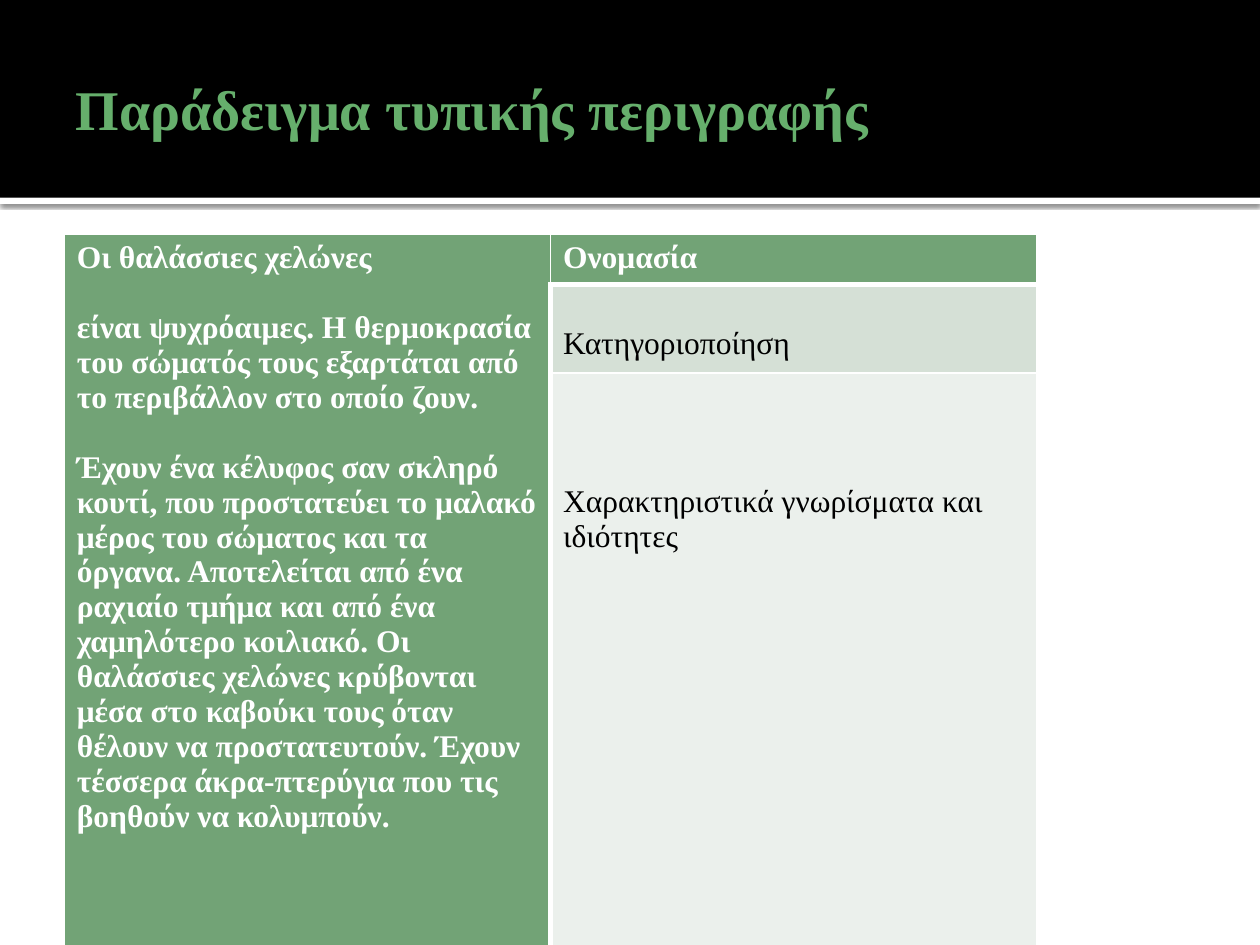
from lxml import etree
from pptx import Presentation
from pptx.dml.color import RGBColor
from pptx.enum.shapes import MSO_SHAPE
from pptx.enum.text import MSO_ANCHOR
from pptx.oxml import parse_xml
from pptx.oxml.ns import nsdecls
from pptx.util import Pt

RECT = MSO_SHAPE.RECTANGLE
MIDDLE = MSO_ANCHOR.MIDDLE

THEME = {
    "font": "Times New Roman",
    "title": 32, "body": 18, "line": 20,
    "black": "000000", "white": "FFFFFF", "lime": "66AF6C",
    "green": "72A376", "pale": "D5E0D6", "mist": "EBF0EC",
}


def style(para, size, color, bold):
    looks = {"name": THEME["font"], "size": Pt(THEME[size]), "bold": bold}
    for key, value in looks.items():
        setattr(para.font, key, value)
    para.font.color.rgb = RGBColor.from_string(THEME[color])


def edge(cell, widths):
    """Draw white cell borders; widths are left, right, top, bottom."""
    props = cell._tc.get_or_add_tcPr()
    for i, (side, width) in enumerate(zip("LRTB", widths)):
        props.insert(i, parse_xml(
            f'<a:ln{side} {nsdecls("a")} w="{Pt(width)}"><a:solidFill>'
            f'<a:srgbClr val="{THEME["white"]}"/></a:solidFill></a:ln{side}>'))


deck = Presentation()
deck.slide_width, deck.slide_height = Pt(720), Pt(540)
slide = deck.slides.add_slide(deck.slide_layouts[5])
shapes = slide.shapes

# Header band with a shadowed white strip below it
title = shapes.title
for top, height, color in [(113, 3.6, "white"), (0, 113, "black")]:
    band = shapes.add_shape(RECT, Pt(0), Pt(top), Pt(720), Pt(height))
    band.shadow.inherit = False
    band.fill.solid()
    band.fill.fore_color.rgb = RGBColor.from_string(THEME[color])
    band.line.fill.background()
    title._element.addprevious(band._element)
    if color == "white":
        effects = band._element.spPr.find("{*}effectLst")
        effects.append(parse_xml(
            f'<a:outerShdw {nsdecls("a")} blurRad="{Pt(2.5)}" '
            f'dist="{Pt(0.8)}" dir="5400000" algn="tl" rotWithShape="0">'
            f'<a:srgbClr val="{THEME["black"]}"><a:alpha val="60000"/>'
            '</a:srgbClr></a:outerShdw>'))

place = {"left": 36, "top": 12.24, "width": 648, "height": 98.64}
for key, value in place.items():
    setattr(title, key, Pt(value))
frame = title.text_frame
inset = {"margin_left": 7.2, "margin_right": 3.6,
         "margin_top": 3.6, "margin_bottom": 3.6}
for key, value in inset.items():
    setattr(frame, key, Pt(value))
frame.vertical_anchor = MIDDLE
frame.word_wrap = True
head = frame.paragraphs[0]
head.text = "Παράδειγμα τυπικής περιγραφής"
head.alignment = 1
style(head, "title", "lime", True)

# Table: the sample text on the left, its parts on the right
heights = [28.8, 50.4, 316.8]
table = shapes.add_table(3, 2, Pt(36.72), Pt(133.92),
                         Pt(555.84), Pt(sum(heights))).table
table.first_row = table.horz_banding = False
for col in table.columns:
    col.width = Pt(277.92)
for row, height in zip(table.rows, heights):
    row.height = Pt(height)
table.cell(0, 0).merge(table.cell(2, 0))

turtles = [
    "Οι θαλάσσιες χελώνες",
    "είναι ψυχρόαιμες. Η θερμοκρασία του σώματός τους εξαρτάται από "
    "το περιβάλλον στο οποίο ζουν.",
    "Έχουν ένα κέλυφος σαν σκληρό κουτί, που προστατεύει το μαλακό μέρος "
    "του σώματος και τα όργανα. Αποτελείται από ένα ραχιαίο τμήμα και από "
    "ένα χαμηλότερο κοιλιακό. Οι θαλάσσιες χελώνες κρύβονται μέσα στο "
    "καβούκι τους όταν θέλουν να προστατευτούν. Έχουν τέσσερα άκρα-πτερύγια "
    "που τις βοηθούν να κολυμπούν.",
]
# row, column, paragraphs, lines left free on top, fill, text, bold, borders
cells = [
    (0, 0, turtles, 0, "green", "white", True, (1, 1, 1, 3)),
    (0, 1, ["Ονομασία"], 0, "green", "white", True, (1, 1, 1, 3)),
    (1, 1, ["Κατηγοριοποίηση"], 1, "pale", "black", False, (3, 1, 3, 1)),
    (2, 1, ["Χαρακτηριστικά γνωρίσματα και ιδιότητες"], 3,
     "mist", "black", False, (3, 1, 1, 1)),
]
for row, col, texts, free, fill, color, bold, widths in cells:
    cell = table.cell(row, col)
    cell.fill.solid()
    cell.fill.fore_color.rgb = RGBColor.from_string(THEME[fill])
    cell.margin_top = Pt(3.6 + free * THEME["line"])
    edge(cell, widths)
    cell.text = "\n".join(texts)
    for i, para in enumerate(cell.text_frame.paragraphs):
        if i:
            para.space_before = Pt(THEME["line"])
        style(para, "body", color, bold)

deck.save("out.pptx")
